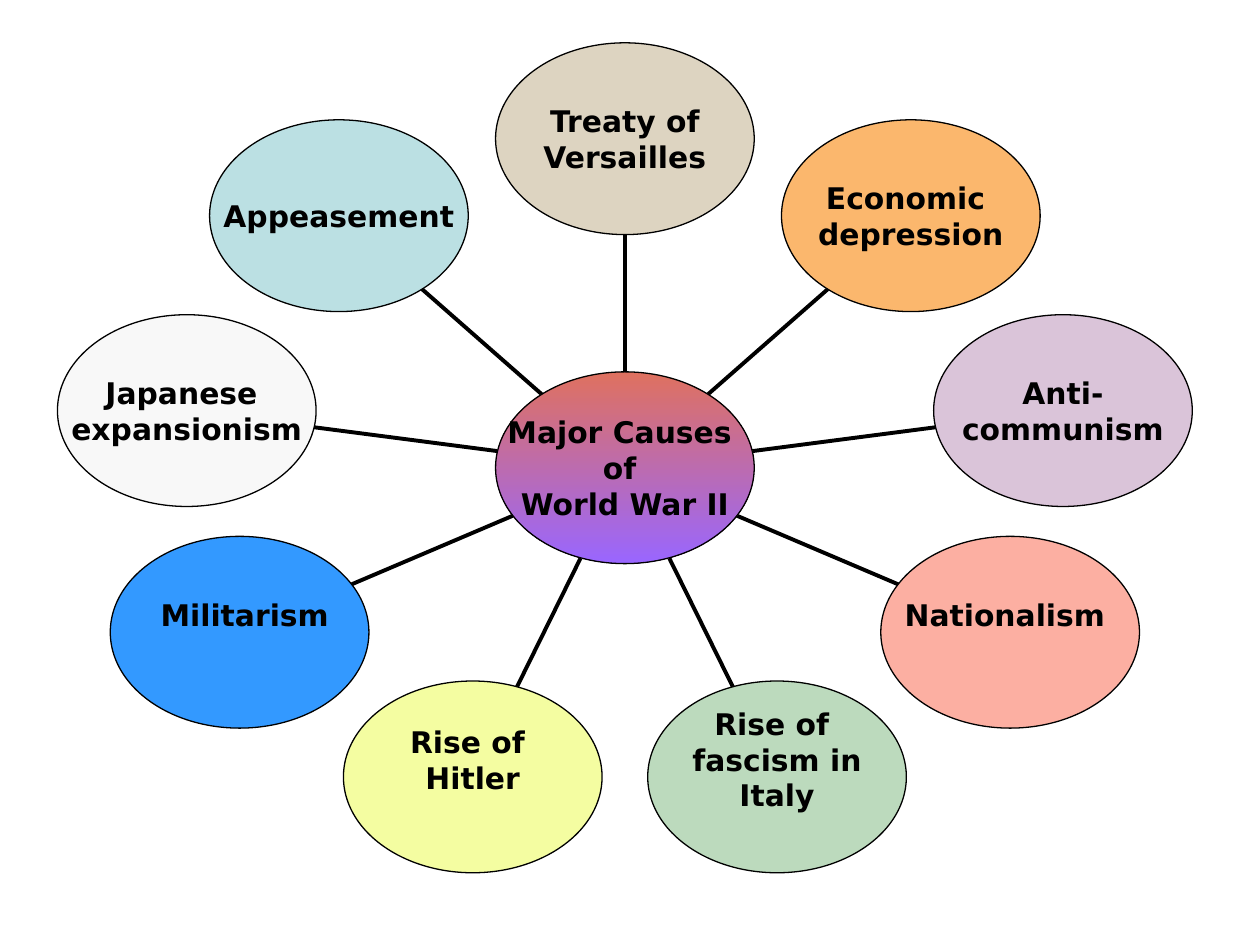
import math
from dataclasses import dataclass

import lxml.etree
import pptx
import pptx.dml.color
import pptx.enum.shapes
import pptx.enum.text
import pptx.oxml.ns
import pptx.util
from pptx.util import Pt

FONT = "DejaVu Sans"
TEXT_SIZE = 17
LINE_HEIGHT = 20
BLACK = "000000"
HUB_X, HUB_Y = 357.1, 267.3
OVAL_RX, OVAL_RY = 73.9, 54.8
RING_RX, RING_RY = 254.2, 188


@dataclass
class Cause:
    label: str
    fill: str
    lines_below: int = 0


# Counter-clockwise from the upper left, ending at the top.
CAUSES = [
    Cause("Appeasement", "BBE0E3"),
    Cause("Japanese \nexpansionism", "F8F8F8"),
    Cause(" Militarism", "3399FF", 1),
    Cause("Rise of \nHitler", "F4FDA1", 1),
    Cause("Rise of \nfascism in\nItaly", "BCDABD", 1),
    Cause("Nationalism ", "FCAFA2", 1),
    Cause("Anti-\ncommunism", "DAC4D9"),
    Cause("Economic \ndepression", "FBB76D"),
    Cause("Treaty of\nVersailles", "DDD4C1"),
]


def rgb(value: str) -> pptx.dml.color.RGBColor:
    return pptx.dml.color.RGBColor.from_string(value)


def add_oval(page, x: float, y: float, label: str, lines_below: int = 0):
    """Draw a labelled oval centred on x, y; lines_below lifts its text."""
    oval = page.shapes.add_shape(
        pptx.enum.shapes.MSO_SHAPE.OVAL,
        Pt(x - OVAL_RX), Pt(y - OVAL_RY), Pt(2 * OVAL_RX), Pt(2 * OVAL_RY),
    )
    oval.shadow.inherit = False
    oval.line.color.rgb = rgb(BLACK)
    oval.line.width = Pt(0.75)

    frame = oval.text_frame
    frame.word_wrap = False
    frame.vertical_anchor = pptx.enum.text.MSO_ANCHOR.MIDDLE
    frame.margin_left = frame.margin_right = frame.margin_top = 0
    frame.margin_bottom = Pt(lines_below * LINE_HEIGHT)
    frame.text = label
    for para in frame.paragraphs:
        para.alignment = pptx.enum.text.PP_ALIGN.CENTER
        for span in para.runs:
            span.font.name = FONT
            span.font.size = Pt(TEXT_SIZE)
            span.font.bold = True
            span.font.color.rgb = rgb(BLACK)
    return oval


def add_spoke(page, x1: float, y1: float, x2: float, y2: float) -> None:
    spoke = page.shapes.add_connector(
        pptx.enum.shapes.MSO_CONNECTOR.STRAIGHT, Pt(x1), Pt(y1), Pt(x2), Pt(y2)
    )
    spoke.line.color.rgb = rgb(BLACK)
    spoke.line.width = Pt(2.25)
    lxml.etree.SubElement(spoke._element.spPr, pptx.oxml.ns.qn("a:effectLst"))


def add_cause(page, cause: Cause, angle: float) -> None:
    """Draw a cause on the ring, at an angle clockwise from the top."""
    across, down = math.sin(angle), -math.cos(angle)
    x, y = HUB_X + RING_RX * across, HUB_Y + RING_RY * down
    edge_x, edge_y = OVAL_RX * across, OVAL_RY * down
    add_spoke(page, HUB_X + edge_x, HUB_Y + edge_y, x - edge_x, y - edge_y)
    oval = add_oval(page, x, y, cause.label, cause.lines_below)
    oval.fill.solid()
    oval.fill.fore_color.rgb = rgb(cause.fill)


def add_hub(page) -> None:
    hub = add_oval(page, HUB_X, HUB_Y, "Major Causes \nof \nWorld War II")
    hub.fill.gradient()
    hub.fill.gradient_angle = 270
    for stop, colour in zip(hub.fill.gradient_stops, ("DF715F", "9966FF")):
        stop.color.rgb = rgb(colour)


def main() -> None:
    deck = pptx.Presentation()
    deck.slide_width, deck.slide_height = Pt(720), Pt(540)
    page = deck.slides.add_slide(deck.slide_layouts[6])
    step = 2 * math.pi / len(CAUSES)
    for number, cause in enumerate(CAUSES, start=1):
        add_cause(page, cause, -number * step)
    add_hub(page)
    deck.save("out.pptx")


if __name__ == "__main__":
    main()
